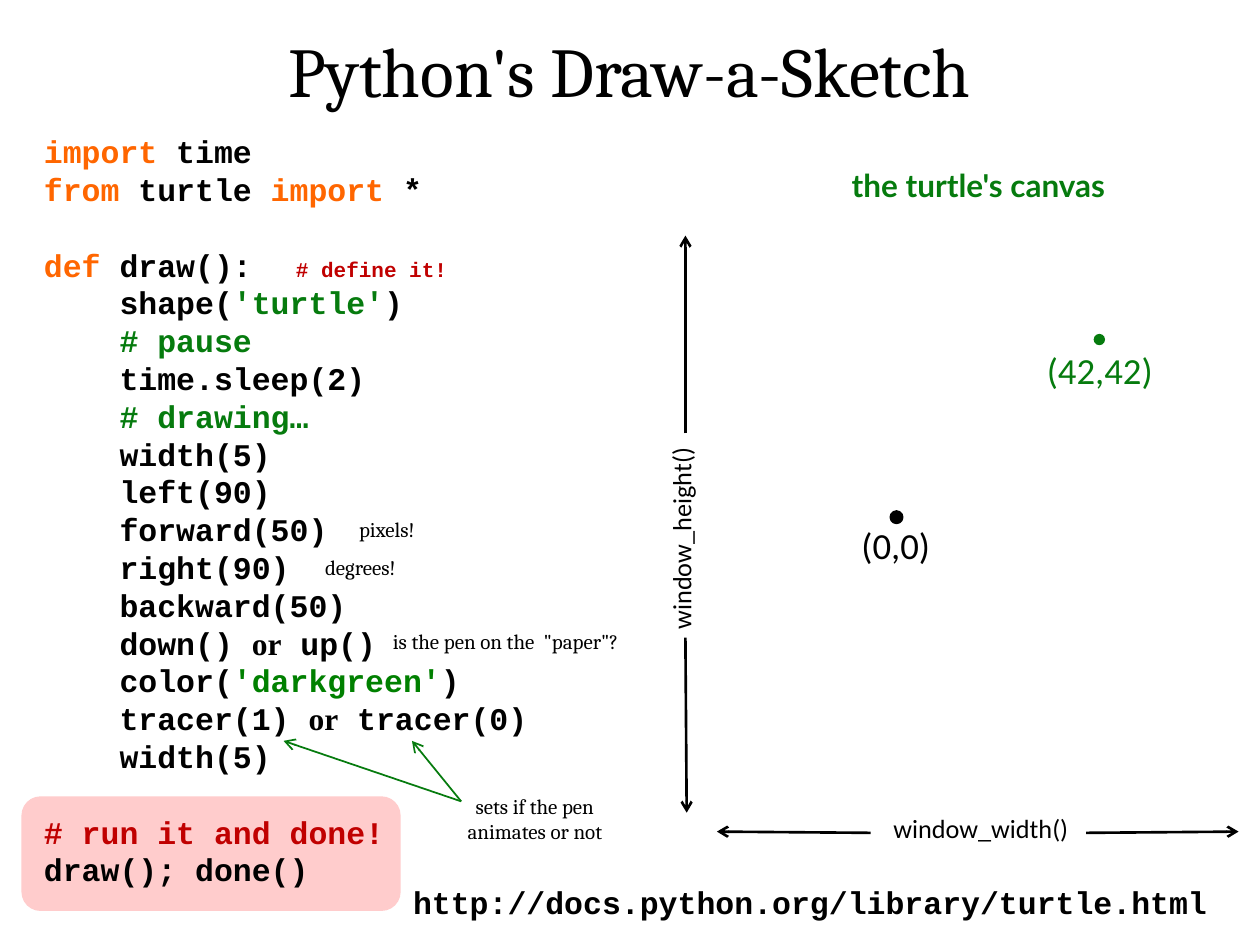
from lxml.etree import SubElement
from pptx import Presentation
from pptx.dml.color import RGBColor
from pptx.enum.shapes import MSO_CONNECTOR as Link, MSO_SHAPE as Kind
from pptx.enum.text import MSO_AUTO_SIZE as Fit, PP_ALIGN as Align
from pptx.oxml.ns import qn
from pptx.util import Inches, Pt

BLACK, GREEN, LIME = "000000", "067B0E", "008000"
ORANGE, RED, PINK, WHITE = "FF6600", "C00000", "FFCCCC", "FFFFFF"
MONO, SERIF, SANS, ROMAN = "Courier New", "Cambria", "Calibri", "Times New Roman"
LEAD = 21.6


def tint(code):
    return RGBColor.from_string(code)


class Sheet:
    """Holds the slide and the style shared by its elements."""

    def __init__(self, slide):
        self.slide = slide
        self.shapes = slide.shapes

    def style(self, run, size, font, color, bold=False):
        run.font.size = Pt(size)
        run.font.name = font
        run.font.color.rgb = tint(color)
        run.font.bold = bold

    def frame(self, x, y, w, h, wrap=True):
        box = self.shapes.add_textbox(Inches(x), Inches(y), Inches(w), Inches(h))
        box.text_frame.word_wrap = wrap
        box.text_frame.auto_size = Fit.SHAPE_TO_FIT_TEXT
        return box

    def text(self, words, x, y, w, h, size, font, color=BLACK, bold=False,
             align=Align.CENTER, wrap=True):
        box = self.frame(x, y, w, h, wrap)
        box.text_frame.text = words
        par = box.text_frame.paragraphs[0]
        par.alignment = align
        self.style(par.runs[0], size, font, color, bold)
        return box

    def note(self, words, x, y, w, h=0.3, align=Align.CENTER):
        return self.text(words, x, y, w, h, 12, SERIF, align=align)

    def code(self, lines, x, y, w, h):
        frame = self.frame(x, y, w, h).text_frame
        for row, (depth, gap, parts) in enumerate(lines):
            par = frame.paragraphs[0] if row == 0 else frame.add_paragraph()
            par.line_spacing = Pt(LEAD)
            par.space_before = Pt(gap * LEAD)
            props = par._p.get_or_add_pPr()
            props.set("marL", str(Inches(0.6 * depth)))
            props.set("indent", "0")
            for words, color, *rest in parts:
                size, font = rest or (18, MONO)
                run = par.add_run()
                run.text = words
                self.style(run, size, font, color, True)
                if "\t" in words:
                    tabs = SubElement(props, qn("a:tabLst"))
                    SubElement(tabs, qn("a:tab"), pos=str(Inches(2.25)), algn="l")

    def shape(self, kind, x, y, w, h, color):
        item = self.shapes.add_shape(kind, Inches(x), Inches(y), Inches(w), Inches(h))
        item.shadow.inherit = False
        item.fill.solid()
        item.fill.fore_color.rgb = tint(color)
        item.line.fill.background()
        return item

    def arrow(self, start, end, color=BLACK, width=1.5):
        ends = [Inches(v) for v in (*start, *end)]
        line = self.shapes.add_connector(Link.STRAIGHT, *ends)
        line.line.color.rgb = tint(color)
        line.line.width = Pt(width)
        SubElement(line.line._get_or_add_ln(), qn("a:tailEnd"), type="arrow")
        SubElement(line._element.spPr, qn("a:effectLst"))


def plain(words, color=BLACK):
    return 1, 0, [(words, color)]


LINES = [
    (0, 0, [("import ", ORANGE), ("time", BLACK)]),
    (0, 0, [("from", ORANGE), (" turtle ", BLACK), ("import ", ORANGE), ("*", BLACK)]),
    (0, 1, [("def", ORANGE), (" draw():\t", BLACK), ("# define it!", RED, 12, MONO)]),
    (1, 0, [("shape(", BLACK), ("'turtle'", GREEN), (")", BLACK)]),
    plain("# pause", GREEN),
    plain("time.sleep(2)"),
    plain("# drawing…", GREEN),
    plain("width(5)"),
    plain("left(90)"),
    plain("forward(50)"),
    plain("right(90)"),
    plain("backward(50)"),
    (1, 0, [("down() ", BLACK), ("or", BLACK, 18, ROMAN), (" up()", BLACK)]),
    (1, 0, [("color(", BLACK), ("'darkgreen'", LIME), (")", BLACK)]),
    (1, 0, [("tracer(1) ", BLACK), ("or", BLACK, 18, ROMAN), (" tracer(0)", BLACK)]),
    plain("width(5)"),
    (0, 1, [("# run it and done!", RED)]),
    (0, 0, [("draw(); done()", BLACK)]),
]


def main():
    deck = Presentation()
    deck.slide_width, deck.slide_height = Inches(10), Inches(7.5)
    page = Sheet(deck.slides.add_slide(deck.slide_layouts[6]))

    page.shape(Kind.ROUNDED_RECTANGLE, 0.17, 6.32, 3.01, 0.91, PINK)
    page.text("Python's Draw-a-Sketch", 0.83, 0.17, 8.33, 0.77, 40, SERIF)
    page.text("the turtle's canvas", 6.28, 1.27, 2.97, 0.4, 18, "Lato", GREEN, True)
    page.code(LINES, 0.25, 1, 4.38, 6.16)
    page.text("http://docs.python.org/library/turtle.html", 3.18, 6.96, 6.53, 0.4,
              18, MONO, bold=True, align=Align.LEFT, wrap=False)

    page.note("pixels!", 2.63, 4.05, 0.88)
    page.note("degrees!", 2.42, 4.35, 0.88)
    page.note("is the pen on the  \"paper\"?", 3.02, 4.94, 2.25, align=Align.LEFT)
    pen = page.note("sets if the pen animates or not", 3.57, 6.25, 1.35, 0.5)
    pen.fill.solid()
    pen.fill.fore_color.rgb = tint(WHITE)
    for tip in (3.27, 2.25):
        page.arrow((3.66, 6.36), (tip, 5.88), GREEN, 1)

    page.text("window_height()", 4.24, 4.1, 2.33, 0.35, 15, SANS).rotation = 270
    page.text("window_width()", 6.62, 6.4, 2.33, 0.35, 15, SANS)
    page.arrow((8.62, 6.61), (9.83, 6.6))
    page.arrow((6.91, 6.61), (5.69, 6.6))
    page.arrow((5.44, 3.44), (5.44, 1.87))
    page.arrow((5.44, 5.06), (5.45, 6.45))

    page.text("(0,0)", 6.4, 4.1, 1.08, 0.45, 21, SANS, align=Align.RIGHT)
    page.text("(42,42)", 8.21, 2.71, 1.04, 0.45, 21, SANS, GREEN,
              align=Align.LEFT, wrap=False)
    dot = page.shape(Kind.OVAL, 7.07, 4.06, 0.09, 0.09, BLACK)
    dot.line.color.rgb = tint(BLACK)
    dot.line.width = Pt(1.5)
    page.shape(Kind.OVAL, 8.68, 2.65, 0.09, 0.09, GREEN)

    deck.save("out.pptx")


if __name__ == "__main__":
    main()
